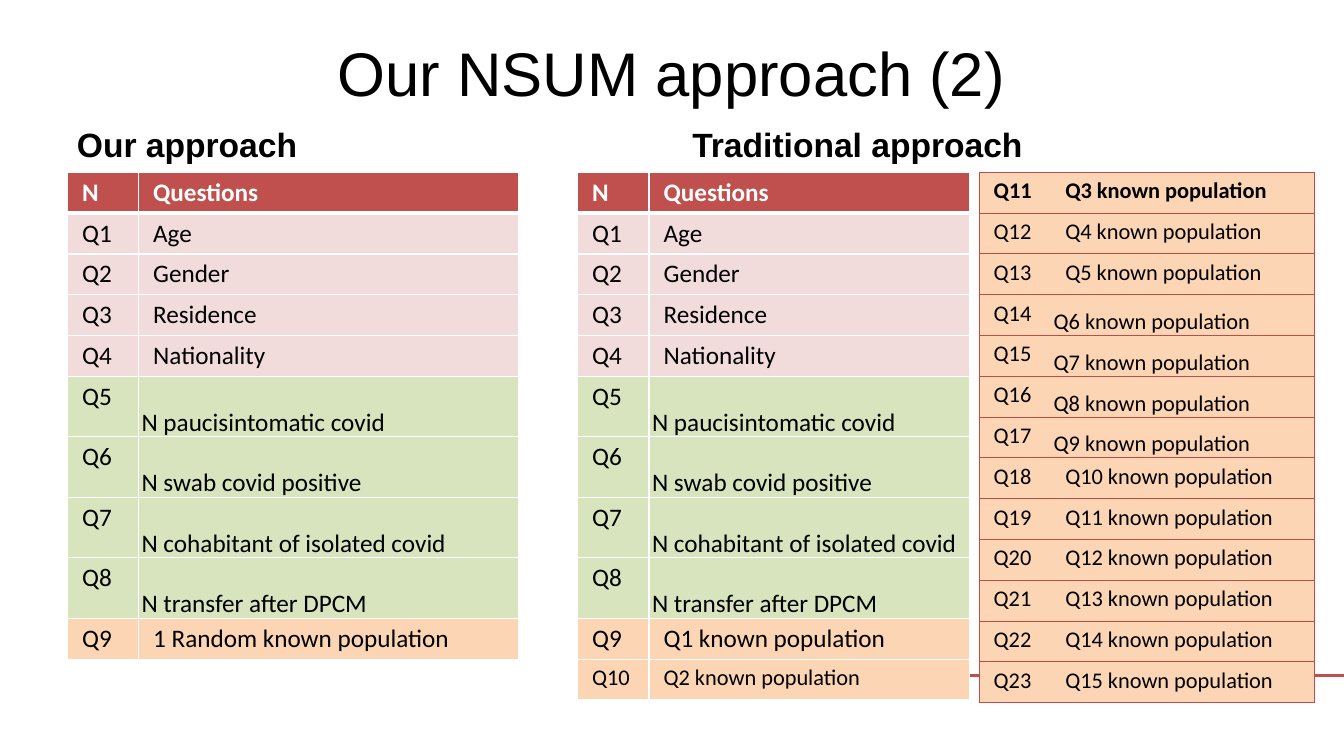
from dataclasses import dataclass

from lxml.etree import SubElement
from pptx import Presentation
from pptx.dml.color import RGBColor
from pptx.enum.shapes import MSO_CONNECTOR
from pptx.enum.text import MSO_ANCHOR, PP_ALIGN
from pptx.oxml import parse_xml
from pptx.oxml.ns import nsdecls, qn
from pptx.util import Pt

PX = 4572


@dataclass(frozen=True)
class Theme:
    heading_font: str = "Arial"
    table_font: str = "Calibri"
    title: int = 44
    heading: int = 24
    cell: int = 18
    small: int = 16
    black: str = "000000"
    white: str = "FFFFFF"
    red: str = "C0504D"
    border: str = "BF4C48"
    pink: str = "F2DCDB"
    green: str = "D7E4BD"
    orange: str = "FCD5B5"


@dataclass(frozen=True)
class Row:
    label: str
    text: str
    fill: str
    size: int
    color: str = Theme.black
    bold: bool = False
    low: bool = False
    spacing: float = 1.0


class Deck:
    def __init__(self, theme):
        self.theme = theme
        self.prs = Presentation()
        self.prs.slide_width = 2667 * PX
        self.prs.slide_height = 1500 * PX
        self.s = self.prs.slides.add_slide(self.prs.slide_layouts[6])

    def font(self, p, name, size, color, bold):
        p.font.name = name
        p.font.size = Pt(size)
        p.font.bold = bold
        p.font.color.rgb = RGBColor.from_string(color)

    def text(self, text, x, y, w, h, size, anchor, align=PP_ALIGN.LEFT, bold=False):
        tf = self.s.shapes.add_textbox(x * PX, y * PX, w * PX, h * PX).text_frame
        tf.word_wrap = True
        tf.vertical_anchor = anchor
        p = tf.paragraphs[0]
        p.text = text
        p.alignment = align
        self.font(p, self.theme.heading_font, size, self.theme.black, bold)

    def line(self, x1, y1, x2, y2, color, width):
        c = self.s.shapes.add_connector(
            MSO_CONNECTOR.STRAIGHT, x1 * PX, y1 * PX, x2 * PX, y2 * PX)
        c.line.color.rgb = RGBColor.from_string(color)
        c.line.width = Pt(width)
        SubElement(c._element.spPr, qn("a:effectLst"))

    def borders(self, cell, color, widths):
        tcPr = cell._tc.get_or_add_tcPr()
        for i, (side, width) in enumerate(zip("LRTB", widths)):
            paint = f'<a:solidFill><a:srgbClr val="{color}"/></a:solidFill>' if width else "<a:noFill/>"
            tcPr.insert(i, parse_xml(
                f'<a:ln{side} {nsdecls("a")} w="{Pt(width)}">{paint}</a:ln{side}>'))

    def cell(self, cell, text, row, low):
        cell.fill.solid()
        cell.fill.fore_color.rgb = RGBColor.from_string(row.fill)
        cell.margin_left = cell.margin_right = (6 if low else 29) * PX
        cell.margin_top = cell.margin_bottom = (0 if low else 10) * PX
        cell.vertical_anchor = MSO_ANCHOR.BOTTOM if low else MSO_ANCHOR.TOP
        p = cell.text_frame.paragraphs[0]
        p.text = text
        if low and row.spacing > 1:
            p.alignment = PP_ALIGN.JUSTIFY
            p.line_spacing = row.spacing
        self.font(p, self.theme.table_font, row.size, row.color, row.bold)

    def table(self, rows, x, y, widths, row_h, color, width, header_width, divider):
        tbl = self.s.shapes.add_table(
            len(rows), len(widths), x * PX, y * PX, sum(widths) * PX, len(rows) * row_h * PX).table
        tbl.first_row = tbl.horz_banding = False
        for col, w in zip(tbl.columns, widths):
            col.width = w * PX
        for i, row in enumerate(rows):
            tbl.rows[i].height = row_h * PX
            top = header_width if i == 1 else width
            bottom = header_width if i == 0 else width
            for j, text in enumerate((row.label, row.text)):
                cell = tbl.cell(i, j)
                self.cell(cell, text, row, row.low and j == 1)
                left, right = (width, divider) if j == 0 else (divider, width)
                self.borders(cell, color, (left, right, top, bottom))


def main():
    t = Theme()
    deck = Deck(t)

    header = [Row("N", "Questions", t.red, t.cell, t.white, True)]
    personal = [Row(f"Q{n}", text, t.pink, t.cell) for n, text in enumerate(
        ("Age", "Gender", "Residence", "Nationality"), 1)]
    covid = [Row(f"Q{n}", text, t.green, t.cell, low=True, spacing=2.0) for n, text in enumerate(
        ("N paucisintomatic covid", "N swab covid positive",
         "N cohabitant of isolated covid", "N transfer after DPCM"), 5)]
    shared = header + personal + covid
    random_known = [Row("Q9", "1 Random known population", t.orange, t.cell)]
    known = [
        Row(f"Q{n + 8}", f"Q{n} known population", t.orange,
            t.cell if n == 1 else t.small, bold=n == 3, low=6 <= n <= 9)
        for n in range(1, 16)]

    deck.line(1208, 1340, 2667, 1340, t.red, 2.25)
    deck.text("Our NSUM approach (2)", 133, 17, 2400, 250, t.title,
              MSO_ANCHOR.MIDDLE, PP_ALIGN.CENTER)
    for heading, x in (("Our approach", 133), ("Traditional approach", 1354)):
        deck.text(heading, x, 196, 1178, 140, t.heading, MSO_ANCHOR.BOTTOM, bold=True)

    top, row_h = 342, 81
    deck.table(shared + random_known, 134, top, (141, 754), row_h, t.white, 1, 3, 1)
    deck.table(shared + known[:2], 1146, top, (142, 636), row_h, t.white, 1, 3, 1)
    deck.table(known[2:], 1943, top, (142, 524), row_h, t.border, 0.75, 0.75, 0)

    deck.prs.save("out.pptx")


if __name__ == "__main__":
    main()
